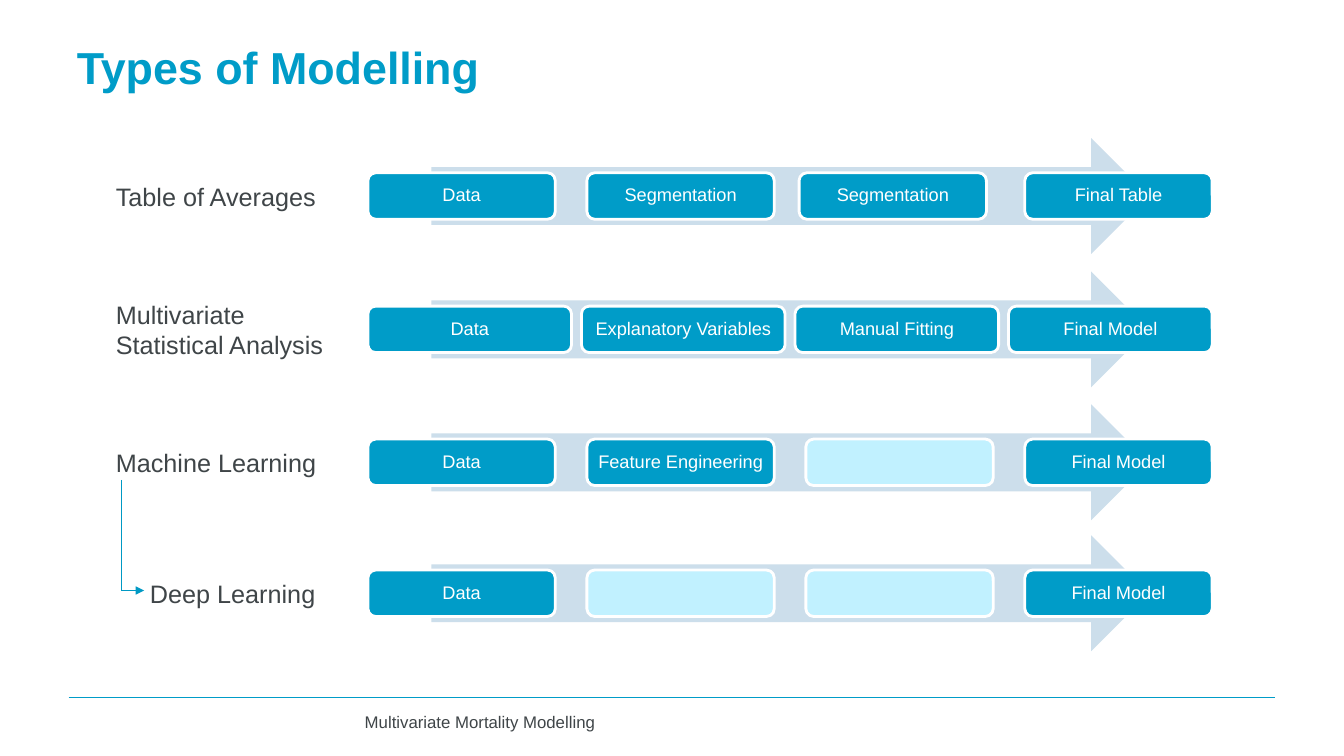
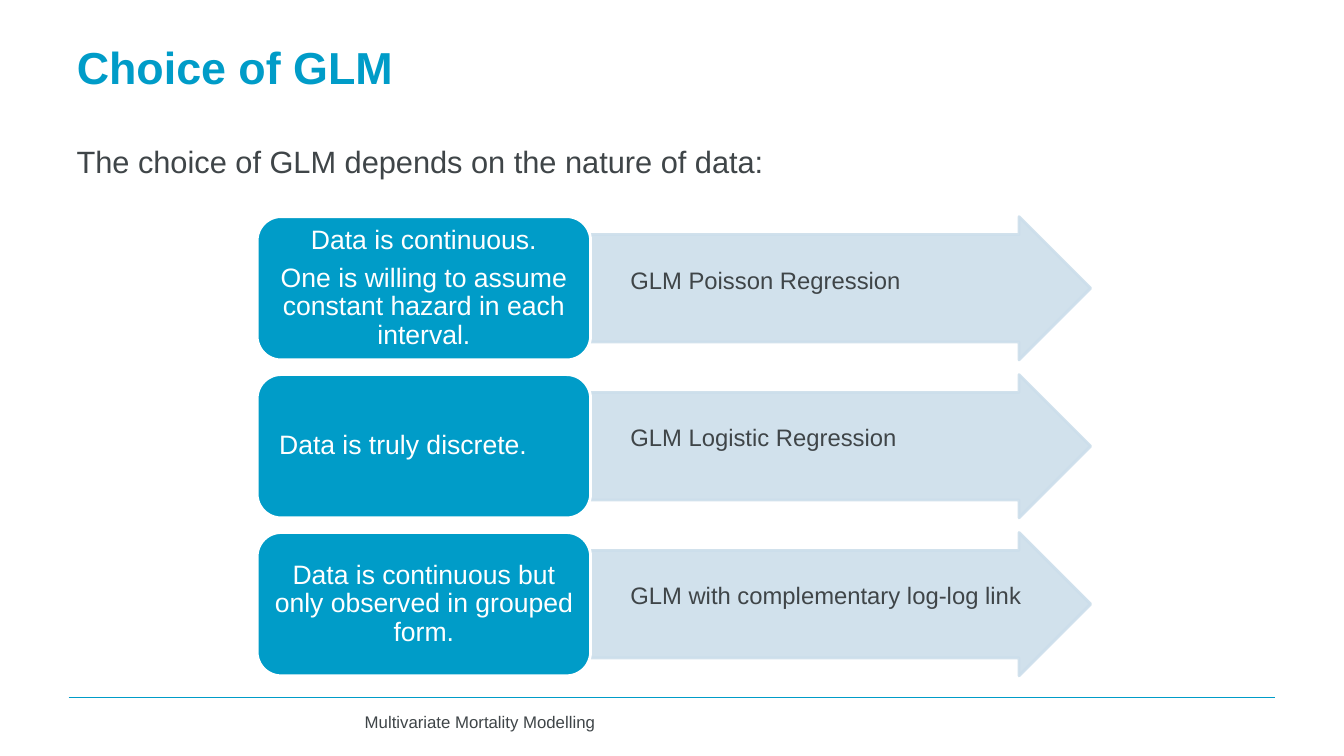
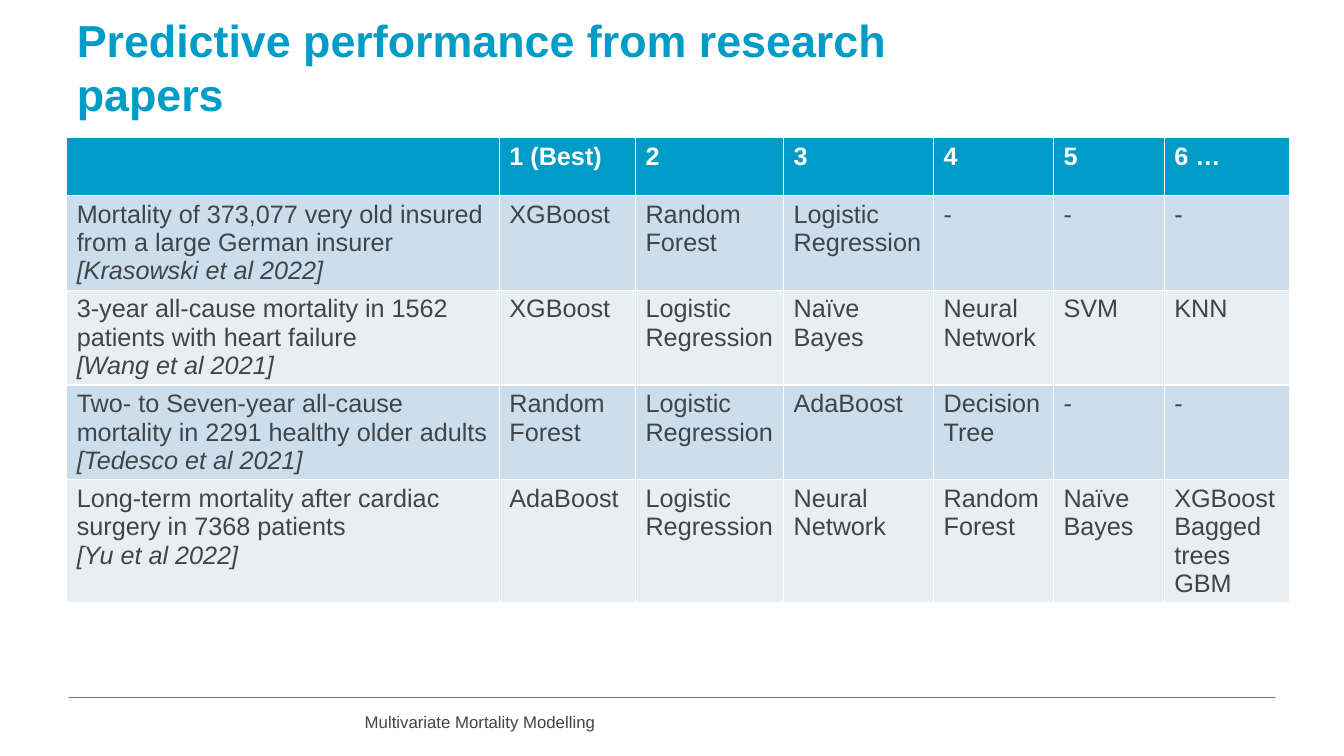
from lxml import etree
from pptx import Presentation
from pptx.dml.color import RGBColor
from pptx.enum.shapes import MSO_CONNECTOR, MSO_SHAPE
from pptx.enum.text import MSO_ANCHOR, MSO_AUTO_SIZE, PP_ALIGN
from pptx.oxml.ns import qn
from pptx.util import Cm, Pt

LEFT, CENTER = PP_ALIGN.LEFT, PP_ALIGN.CENTER
TOP, MIDDLE = MSO_ANCHOR.TOP, MSO_ANCHOR.MIDDLE
ARROW, ROUNDED = MSO_SHAPE.RIGHT_ARROW, MSO_SHAPE.ROUNDED_RECTANGLE
STRAIGHT = MSO_CONNECTOR.STRAIGHT
NO_AUTOFIT = MSO_AUTO_SIZE.NONE

FONT = "Arial"
HEX = {
    "blue": "009CC8",
    "connector": "0099C4",
    "ink": "3F4548",
    "white": "FFFFFF",
    "arrow": "CCDEEB",
    "light": "C1F1FF",
    "pale": "E7EFF5",
}
COLOURS = {name: RGBColor.from_string(value) for name, value in HEX.items()}


def write(frame, lines, size, colour="ink", align=LEFT, anchor=TOP,
          bold=False, spacing=None, gap=0):
    """Fill a text frame with one paragraph per line, gap points apart."""
    frame.word_wrap = True
    frame.auto_size = NO_AUTOFIT
    frame.vertical_anchor = anchor
    for index, line in enumerate(lines):
        para = frame.add_paragraph() if index else frame.paragraphs[0]
        para.text = line
        para.alignment = align
        para.line_spacing = spacing
        if index:
            para.space_before = Pt(gap)
        para.font.name = FONT
        para.font.size = Pt(size)
        para.font.bold = bold
        para.font.color.rgb = COLOURS[colour]


def add_block(slide, preset, left, top, width, height, fill, outline=None):
    """Add a filled shape without shadow, with an optional 2 pt outline."""
    block = slide.shapes.add_shape(preset, Cm(left), Cm(top), Cm(width), Cm(height))
    block.shadow.inherit = False
    block.fill.solid()
    block.fill.fore_color.rgb = COLOURS[fill]
    if outline:
        block.line.color.rgb = COLOURS[outline]
        block.line.width = Pt(2)
    else:
        block.line.fill.background()
    return block


deck = Presentation()
deck.slide_width, deck.slide_height = Cm(33.86), Cm(19.05)
title_only = deck.slide_layouts[5]

# Titles and footers of all slides
titles = [
    ("Types of Modelling", 20.78),
    ("Choice of GLM", 20.78),
    ("Predictive performance from research papers", 24.64),
]
slides = []
lines = []
for text, width in titles:
    slide = deck.slides.add_slide(title_only)
    title = slide.shapes.title
    title.left, title.top, title.width, title.height = Cm(1.68), Cm(1.02), Cm(width), Cm(1.32)
    write(title.text_frame, [text], 32, "blue", anchor=MIDDLE, bold=True)
    footer = slide.shapes.add_textbox(Cm(8.94), Cm(17.81), Cm(20.7), Cm(0.91))
    write(footer.text_frame, ["Multivariate Mortality Modelling"], 12)
    lines.append((slide, (1.73, 17.58), (32.13, 17.58), "blue", 1, False))
    slides.append(slide)
types_slide, choice_slide, papers_slide = slides

# Types of modelling: label, label left, arrow top, box width, third box shift, steps
processes = [
    ("Table of Averages", 2.67, 3.48, 4.72, -0.17,
     ["Data", "Segmentation", "Segmentation", "Final Table"]),
    ("Multivariate Statistical Analysis", 2.67, 6.84, 5.13, 0,
     ["Data", "Explanatory Variables", "Manual Fitting", "Final Model"]),
    ("Machine Learning", 2.67, 10.19, 4.72, 0,
     ["Data", "Feature Engineering", None, "Final Model"]),
    ("Deep Learning", 3.53, 13.49, 4.72, 0,
     ["Data", None, None, "Final Model"]),
]
steps_left, steps_right = 9.27, 30.54
arrow_height, box_height = 2.92, 1.17
for label, label_left, top, box_width, third_shift, steps in processes:
    add_block(types_slide, ARROW, 10.87, top, 18.08, arrow_height, "arrow")
    pitch = (steps_right - steps_left - box_width) / (len(steps) - 1)
    for column, step in enumerate(steps):
        left = steps_left + column * pitch + (third_shift if column == 2 else 0)
        box = add_block(types_slide, ROUNDED, left, top + (arrow_height - box_height) / 2,
                        box_width, box_height, "blue" if step else "light", "white")
        if step:
            frame = box.text_frame
            frame.margin_left = frame.margin_right = Cm(0.12)
            frame.margin_top = frame.margin_bottom = Cm(0.12)
            write(frame, [step], 13, "white", CENTER, MIDDLE, spacing=0.9)
    box = types_slide.shapes.add_textbox(Cm(label_left), Cm(top), Cm(5.84), Cm(arrow_height))
    write(box.text_frame, [label], 18, anchor=MIDDLE)

# Branch from machine learning to deep learning
lines.append((types_slide, (3.05, 12.09), (3.05, 14.88), "connector", 0.75, False))
lines.append((types_slide, (3.05, 14.88), (3.63, 14.88), "connector", 0.75, True))

# Choice of GLM: condition, right margin, model
intro = choice_slide.shapes.add_textbox(Cm(1.68), Cm(3.4), Cm(31.04), Cm(1.3))
write(intro.text_frame, ["The choice of GLM depends on the nature of data:"], 22, spacing=1.07)
choices = [
    (["Data is continuous.", "One is willing to assume constant hazard in each interval."],
     0.2, "GLM Poisson Regression"),
    (["Data is truly discrete."], 1.25, "GLM Logistic Regression"),
    (["Data is continuous but only observed in grouped form."],
     0.2, "GLM with complementary log-log link"),
]
for row, (condition, right_margin, model) in enumerate(choices):
    top = 5.46 + row * 3.98
    arrow = add_block(choice_slide, ARROW, 14.88, top, 12.6, 3.61, "arrow", "arrow")
    arrow.adjustments[0], arrow.adjustments[1] = 0.75, 0.5
    for colour in arrow.element.spPr.iter(qn("a:srgbClr")):
        etree.SubElement(colour, qn("a:alpha"), val="90000")
    frame = arrow.text_frame
    frame.margin_left, frame.margin_right = Cm(1), Cm(0)
    frame.margin_top, frame.margin_bottom = Cm(0), Cm(0.35)
    write(frame, [model], 17, anchor=MIDDLE, spacing=0.9)

    box = add_block(choice_slide, ROUNDED, 6.48, top, 8.4, 3.61, "blue", "white")
    frame = box.text_frame
    frame.margin_left, frame.margin_right = Cm(0.2), Cm(right_margin)
    frame.margin_top = frame.margin_bottom = Cm(0.1)
    write(frame, condition, 19, "white", CENTER, MIDDLE, spacing=0.9, gap=6.65)

# Predictive performance table: a list in a cell is one paragraph per item
ranking = [
    ["", "1 (Best)", "2", "3", "4", "5", "6 …"],
    [["Mortality of 373,077 very old insured from a large German insurer",
      "[Krasowski et al 2022]"],
     "XGBoost", "Random Forest", "Logistic Regression", "-", "-", "-"],
    [["3-year all-cause mortality in 1562 patients with heart failure", "[Wang et al 2021]"],
     "XGBoost", "Logistic Regression", "Naïve Bayes", "Neural Network", "SVM", "KNN"],
    [["Two- to Seven-year all-cause mortality in 2291 healthy older adults",
      "[Tedesco et al 2021]"],
     "Random Forest", "Logistic Regression", "AdaBoost", "Decision Tree", "-", "-"],
    [["Long-term mortality after cardiac surgery in 7368 patients", "[Yu et al 2022]"],
     "AdaBoost", "Logistic Regression", "Neural Network", "Random Forest", "Naïve Bayes",
     ["XGBoost", "Bagged trees", "GBM"]],
]
column_widths = [10.9, 3.43, 3.73, 3.78, 3.02, 2.79, 3.15]
row_heights = [1.45, 2.39, 2.39, 2.39, 3.1]
table = papers_slide.shapes.add_table(
    len(row_heights), len(column_widths), Cm(1.68), Cm(3.47),
    Cm(sum(column_widths)), Cm(sum(row_heights))).table
for column, width in zip(table.columns, column_widths):
    column.width = Cm(width)
for row, height in zip(table.rows, row_heights):
    row.height = Cm(height)
for row, entries in enumerate(ranking):
    header = row == 0
    fill = "blue" if header else "arrow" if row % 2 else "pale"
    for column, entry in enumerate(entries):
        cell = table.cell(row, column)
        cell.fill.solid()
        cell.fill.fore_color.rgb = COLOURS[fill]
        paragraphs = entry if isinstance(entry, list) else [entry]
        write(cell.text_frame, paragraphs, 18, "white" if header else "ink", bold=header)
        if column == 0 and not header:
            cell.text_frame.paragraphs[-1].font.italic = True

# Footer lines and branch lines
for slide, start, end, colour, width, has_head in lines:
    connector = slide.shapes.add_connector(
        STRAIGHT, Cm(start[0]), Cm(start[1]), Cm(end[0]), Cm(end[1]))
    connector.line.color.rgb = COLOURS[colour]
    connector.line.width = Pt(width)
    properties = connector.element.spPr
    if has_head:
        etree.SubElement(properties.find(qn("a:ln")), qn("a:tailEnd"), type="triangle")
    etree.SubElement(properties, qn("a:effectLst"))

deck.save("out.pptx")
